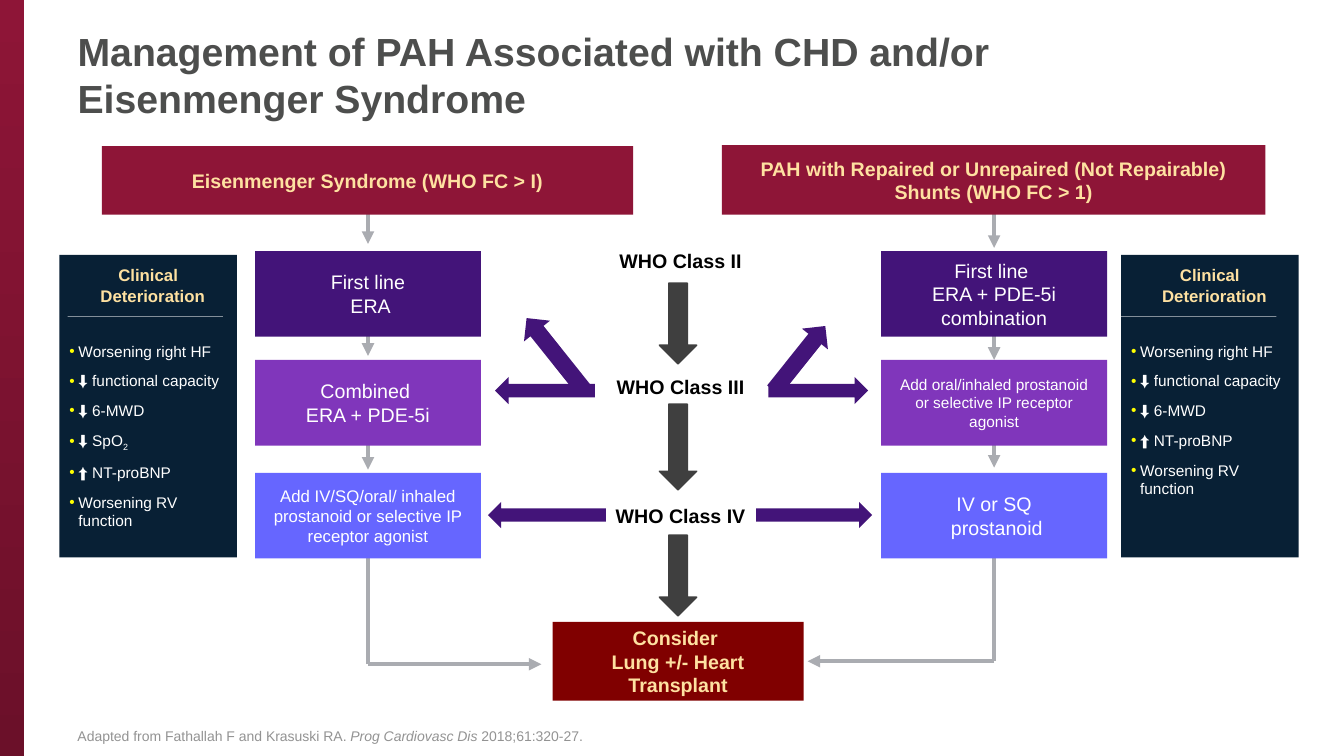
from lxml import etree
from pptx import Presentation
from pptx.dml.color import RGBColor
from pptx.enum.shapes import MSO_CONNECTOR, MSO_SHAPE
from pptx.enum.text import MSO_ANCHOR, PP_ALIGN
from pptx.oxml.ns import qn
from pptx.util import Inches, Pt

RECT, DOWN = MSO_SHAPE.RECTANGLE, MSO_SHAPE.DOWN_ARROW
LEFT_ARROW, RIGHT_ARROW = MSO_SHAPE.LEFT_ARROW, MSO_SHAPE.RIGHT_ARROW
STRAIGHT = MSO_CONNECTOR.STRAIGHT
CENTER, LEFT = PP_ALIGN.CENTER, PP_ALIGN.LEFT
TOP, MIDDLE, BOTTOM = MSO_ANCHOR.TOP, MSO_ANCHOR.MIDDLE, MSO_ANCHOR.BOTTOM

WINE, DARK_WINE = RGBColor(0x8E, 0x15, 0x37), RGBColor(0x6B, 0x10, 0x29)
MAROON, CREAM = RGBColor(0x80, 0, 0), RGBColor(0xFE, 0xE1, 0xA1)
INDIGO, PURPLE = RGBColor(0x43, 0x14, 0x79), RGBColor(0x80, 0x36, 0xBB)
PERIWINKLE, NAVY = RGBColor(0x66, 0x66, 0xFF), RGBColor(0x08, 0x20, 0x35)
CHARCOAL, TITLE_GRAY = RGBColor(0x3F, 0x3F, 0x3F), RGBColor(0x4D, 0x4E, 0x4D)
LINE_GRAY, SOURCE_GRAY = RGBColor(0xAA, 0xAC, 0xB1), RGBColor(0x93, 0x93, 0x93)
WHITE, BLACK = RGBColor(255, 255, 255), RGBColor(0, 0, 0)

# Content
TITLE = "Management of PAH Associated with CHD and/or Eisenmenger Syndrome"
SOURCE = [("Adapted from Fathallah F and Krasuski RA. ", False),
          ("Prog Cardiovasc Dis ", True), ("2018;61:320-27.", False)]
TRANSPLANT = ["Consider \vLung +/- Heart Transplant"]
SIGNS_HEADING = "Clinical\vDeterioration"
# Each pathway: heading, heading box, column left, arrow tips, (lines, size) steps
PATHWAYS = [
    {"heading": "Eisenmenger Syndrome (WHO FC > I)",
     "heading_box": (1.01, 1.45, 5.27, 0.68), "left": 2.53,
     "tips": (2.42, 3.53, 4.66),
     "steps": [(["First line", " ERA"], 14),
               (["Combined ", "ERA + PDE-5i"], 14),
               (["Add IV/SQ/oral/ inhaled prostanoid or selective IP "
                 "receptor agonist"], 12)],
     "elbow_y": 6.59, "elbow_tip": 5.37,
     "signs_left": 0.59, "rule_left": 0.67,
     "signs": ["Worsening right HF", "⬇ functional capacity", "⬇ 6-MWD",
               "⬇ SpO_2", "⬆ NT-proBNP", "Worsening RV function"]},
    {"heading": "PAH with Repaired or Unrepaired (Not Repairable) Shunts "
                "(WHO FC > 1)",
     "heading_box": (7.16, 1.44, 5.39, 0.69), "left": 8.74,
     "tips": (2.46, 3.57, 4.64),
     "steps": [(["First line ", "ERA + PDE-5i combination"], 14),
               (["Add oral/inhaled prostanoid or selective IP receptor "
                 "agonist"], 11),
               (["IV or SQ", " prostanoid"], 14)],
     "elbow_y": 6.56, "elbow_tip": 8.01,
     "signs_left": 11.12, "rule_left": 11.12,
     "signs": ["Worsening right HF", "⬇ functional capacity", "⬇ 6-MWD",
               "⬆ NT-proBNP", "Worsening RV function"]},
]
# Class label, label top, arrow top, arrow height
WHO_CLASSES = [("WHO Class II", 2.42, 2.81, 0.8),
               ("WHO Class III", 3.67, 4.01, 0.85),
               ("WHO Class IV", 4.95, 5.31, 0.8)]
# Preset, box, rotation
CLASS_ARROWS = [(LEFT_ARROW, (5.05, 3.35, 0.92, 0.33), 51.4),
                (LEFT_ARROW, (4.91, 3.74, 0.99, 0.27), 0),
                (LEFT_ARROW, (4.84, 4.98, 1.17, 0.26), 0),
                (RIGHT_ARROW, (7.52, 3.39, 0.82, 0.33), 308.6),
                (RIGHT_ARROW, (7.62, 3.74, 0.99, 0.27), 0),
                (RIGHT_ARROW, (7.5, 4.98, 1.15, 0.26), 0)]

# Grid
STEP_TOPS, STEP_W, STEP_H = (2.49, 3.57, 4.69), 2.24, 0.85
STEP_FILLS = (INDIGO, PURPLE, PERIWINKLE)
ARROW_RUN, CENTER_X = 0.76, 6.73
SIGNS_TOP, SIGNS_W, SIGNS_H = 2.53, 1.76, 3
RULE_Y, RULE_W, HANG = 3.14, 1.54, 0.09

prs = Presentation()
prs.slide_width, prs.slide_height = Inches(13.33), Inches(7.5)
slide = prs.slides.add_slide(prs.slide_layouts[5])
shapes = slide.shapes


def inches(box):
    return [Inches(v) for v in box]


def add_run(paragraph, text, **font):
    run = paragraph.add_run()
    run.text = text
    color = font.pop("color")
    for key, value in {"name": "Arial", **font}.items():
        setattr(run.font, key, value)
    run.font.color.rgb = color
    return run


def write(frame, lines, align=CENTER, anchor=MIDDLE, wrap=True, **font):
    frame.word_wrap, frame.vertical_anchor = wrap, anchor
    for i, text in enumerate(lines):
        paragraph = frame.add_paragraph() if i else frame.paragraphs[0]
        paragraph.alignment = align
        # A vertical tab marks a line break inside the paragraph
        for j, part in enumerate(text.split("\v")):
            if j:
                paragraph.add_line_break()
            add_run(paragraph, part, **font)


def add_block(preset, box, fill, outline=None):
    block = shapes.add_shape(preset, *inches(box))
    block.shadow.inherit = False
    block.fill.solid()
    block.fill.fore_color.rgb = fill
    if outline:
        block.line.color.rgb, block.line.width = outline, Pt(1)
    else:
        block.line.fill.background()
    return block


def add_line(x1, y1, x2, y2, color=LINE_GRAY, width=3, arrow=False, alpha=None):
    line = shapes.add_connector(STRAIGHT, *inches((x1, y1, x2, y2)))
    line.line.color.rgb, line.line.width = color, Pt(width)
    props = line._element.spPr
    stroke = props.find(qn("a:ln"))
    if arrow:
        etree.SubElement(stroke, qn("a:tailEnd"), type="triangle")
    if alpha:
        rgb = stroke.find(".//" + qn("a:srgbClr"))
        etree.SubElement(rgb, qn("a:alpha"), val=str(alpha * 1000))
    etree.SubElement(props, qn("a:effectLst"))


def add_signs(left, signs):
    frame = add_block(RECT, (left, SIGNS_TOP, SIGNS_W, SIGNS_H), NAVY).text_frame
    frame.margin_top = Inches(0.1)
    write(frame, [SIGNS_HEADING], anchor=TOP, size=Pt(12), bold=True, color=CREAM)
    for i, sign in enumerate(signs):
        paragraph = frame.add_paragraph()
        paragraph.alignment = LEFT
        paragraph.space_before, paragraph.space_after = Pt(6 if i else 26), Pt(2)
        main, _, subscript = sign.partition("_")
        add_run(paragraph, main, size=Pt(11), color=WHITE)
        if subscript:
            low = add_run(paragraph, subscript, size=Pt(11), color=WHITE)
            low.font._element.set("baseline", "-25000")
        props = paragraph._p.get_or_add_pPr()
        bullet_color = etree.SubElement(props, qn("a:buClr"))
        etree.SubElement(bullet_color, qn("a:srgbClr"), val="FFFF00")
        etree.SubElement(props, qn("a:buFont"), typeface="Arial")
        etree.SubElement(props, qn("a:buChar"), char="•")
    for paragraph in frame.paragraphs:
        props = paragraph._p.get_or_add_pPr()
        props.set("marL", str(Inches(HANG)))
        props.set("indent", str(-Inches(HANG)))
    frame.paragraphs[0].space_before = Pt(6)


# Side band and title
band = add_block(RECT, (-0.01, 0, 0.25, 7.51), WINE)
band.fill.gradient()
band.fill.gradient_angle = 270
for stop, color in zip(band.fill.gradient_stops, (WINE, DARK_WINE)):
    stop.color.rgb = color
title = shapes.title
title.left, title.top, title.width, title.height = inches((0.67, 0.22, 11.75, 1.3))
write(title.text_frame, [TITLE], LEFT, TOP, size=Pt(28), bold=True, color=TITLE_GRAY)

# Pathway connectors, behind the boxes
for pathway in PATHWAYS:
    x, y = pathway["left"] + STEP_W / 2, pathway["elbow_y"]
    for tip in pathway["tips"]:
        add_line(x, tip - ARROW_RUN, x, tip, arrow=True)
    add_line(x, STEP_TOPS[-1] + STEP_H, x, y)
    add_line(x, y, pathway["elbow_tip"], y, arrow=True)

# Pathway headings, steps and signs of deterioration
for pathway in PATHWAYS:
    heading = add_block(RECT, pathway["heading_box"], WINE)
    write(heading.text_frame, [pathway["heading"]], size=Pt(14), bold=True, color=CREAM)
    for (lines, size), top, fill in zip(pathway["steps"], STEP_TOPS, STEP_FILLS):
        step = add_block(RECT, (pathway["left"], top, STEP_W, STEP_H), fill)
        write(step.text_frame, lines, size=Pt(size), color=WHITE)
    add_signs(pathway["signs_left"], pathway["signs"])
    rule = pathway["rule_left"]
    add_line(rule, RULE_Y, rule + RULE_W, RULE_Y, WHITE, 0.5, alpha=50)

# WHO classes down the centre
for label, top, arrow_top, arrow_height in WHO_CLASSES:
    who = shapes.add_textbox(*inches((CENTER_X - 0.73, top, 1.5, 0.34)))
    write(who.text_frame, [label], anchor=TOP, wrap=False, size=Pt(14), bold=True,
          color=BLACK)
    add_block(DOWN, (CENTER_X - 0.19, arrow_top, 0.37, arrow_height), CHARCOAL, CHARCOAL)
for preset, box, rotation in CLASS_ARROWS:
    add_block(preset, box, INDIGO).rotation = rotation

# Transplant and source
transplant = add_block(RECT, (5.48, 6.17, 2.49, 0.78), MAROON)
write(transplant.text_frame, TRANSPLANT, size=Pt(14), bold=True, color=CREAM)
source = shapes.add_textbox(*inches((0.67, 6.95, 11.75, 0.48))).text_frame
source.word_wrap, source.vertical_anchor = True, BOTTOM
for text, italic in SOURCE:
    add_run(source.paragraphs[0], text, size=Pt(10), italic=italic, color=SOURCE_GRAY)

prs.save("out.pptx")
